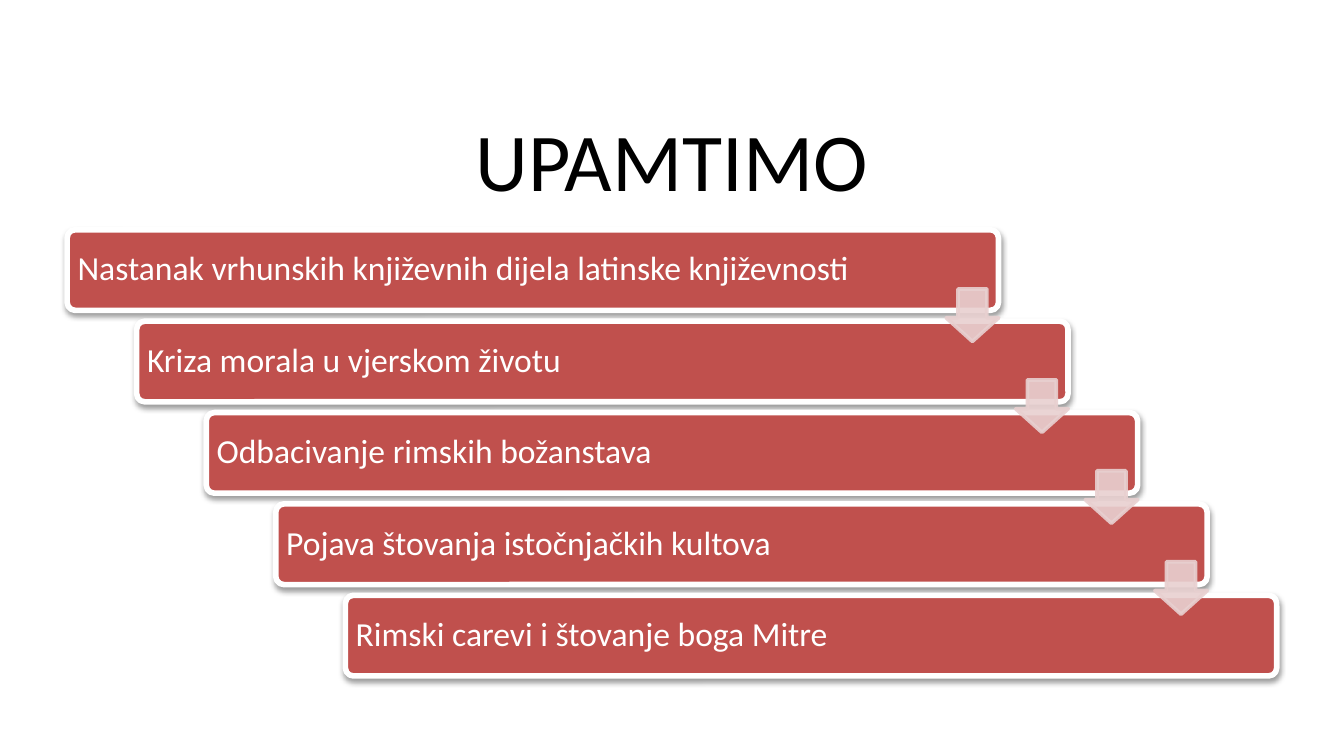
from lxml import etree
from pptx import Presentation
from pptx.dml.color import RGBColor
from pptx.enum.shapes import MSO_SHAPE
from pptx.enum.text import MSO_ANCHOR, PP_ALIGN
from pptx.oxml.ns import qn
from pptx.util import Inches, Pt

BAR = MSO_SHAPE.ROUNDED_RECTANGLE
ARROW = MSO_SHAPE.DOWN_ARROW
MIDDLE = MSO_ANCHOR.MIDDLE
LEFT, CENTER = PP_ALIGN.LEFT, PP_ALIGN.CENTER

COLORS = {"bar": "C0504D", "white": "FFFFFF", "arrow": "E8D0D0", "black": "000000"}
STEPS = [
    "Nastanak vrhunskih književnih dijela latinske književnosti",
    "Kriza morala u vjerskom životu",
    "Odbacivanje rimskih božanstava",
    "Pojava štovanja istočnjačkih kultova",
    "Rimski carevi i štovanje boga Mitre",
]
WIDTH = 10
HEIGHT = WIDTH * 9 / 16
EDGE, SPAN, TOP = 0.5, 9, 1.71
BAR_W, BAR_H, DROP = 6.93, 0.6, 0.68
SHIFT = (SPAN - BAR_W) / (len(STEPS) - 1)
ARROW_W, ARROW_TOP, ARROW_END = 0.39, 2.15, 4.18
ARROW_DROP = (ARROW_END - ARROW_TOP) / (len(STEPS) - 2)


def color(name):
    return RGBColor.from_string(COLORS[name])


def write(shape, text, size, ink, align):
    frame = shape.text_frame
    frame.text = text
    frame.word_wrap = True
    frame.vertical_anchor = MIDDLE
    para = frame.paragraphs[0]
    para.alignment = align
    para.line_spacing = 0.9
    font = para.runs[0].font
    font.name, font.size = "Calibri", Pt(size)
    font.color.rgb = color(ink)


def add_shape(shapes, kind, box, fill, line, width):
    shape = shapes.add_shape(kind, *(Inches(v) for v in box))
    shape.shadow.inherit = False
    shape.fill.solid()
    shape.fill.fore_color.rgb = color(fill)
    shape.line.color.rgb = color(line)
    shape.line.width = Pt(width)
    return shape


def set_alpha(node, percent):
    etree.SubElement(node, qn("a:alpha"), val=str(percent * 1000))


def add_shadow(shape):
    effects = shape._element.spPr.find(qn("a:effectLst"))
    outer = etree.SubElement(
        effects, qn("a:outerShdw"), blurRad=str(Pt(3.1)), dist=str(Pt(1.6)),
        dir="5400000", rotWithShape="0")
    tint = etree.SubElement(outer, qn("a:srgbClr"), val=COLORS["black"])
    set_alpha(tint, 38)


def add_bar(shapes, i, text):
    box = EDGE + i * SHIFT, TOP + i * DROP, BAR_W, BAR_H
    bar = add_shape(shapes, BAR, box, "bar", "white", 3)
    bar.adjustments[0] = 0.1
    add_shadow(bar)
    write(bar, text, 18, "white", LEFT)
    frame = bar.text_frame
    frame.margin_left = frame.margin_right = Inches(0.06)
    frame.margin_top = frame.margin_bottom = Inches(0.06)


def add_arrow(shapes, i):
    left = EDGE + BAR_W - ARROW_W + i * SHIFT
    box = left, ARROW_TOP + i * ARROW_DROP, ARROW_W, ARROW_W
    arrow = add_shape(shapes, ARROW, box, "arrow", "arrow", 2)
    arrow.adjustments[0] = 0.55
    arrow.adjustments[1] = 0.45
    for node in arrow._element.spPr.iter(qn("a:srgbClr")):
        set_alpha(node, 90)


def add_title(slide, text):
    title = slide.shapes.title
    title.left, title.top = Inches(EDGE), Inches(0.84)
    title.width, title.height = Inches(SPAN), Inches(0.78)
    write(title, text, 44, "black", CENTER)


def main():
    deck = Presentation()
    deck.slide_width, deck.slide_height = Inches(WIDTH), Inches(HEIGHT)
    slide = deck.slides.add_slide(deck.slide_layouts[5])
    add_title(slide, "UPAMTIMO")
    stairs = slide.shapes.add_group_shape().shapes
    for i, text in enumerate(STEPS):
        add_bar(stairs, i, text)
    for i in range(len(STEPS) - 1):
        add_arrow(stairs, i)
    deck.save("out.pptx")


if __name__ == "__main__":
    main()
